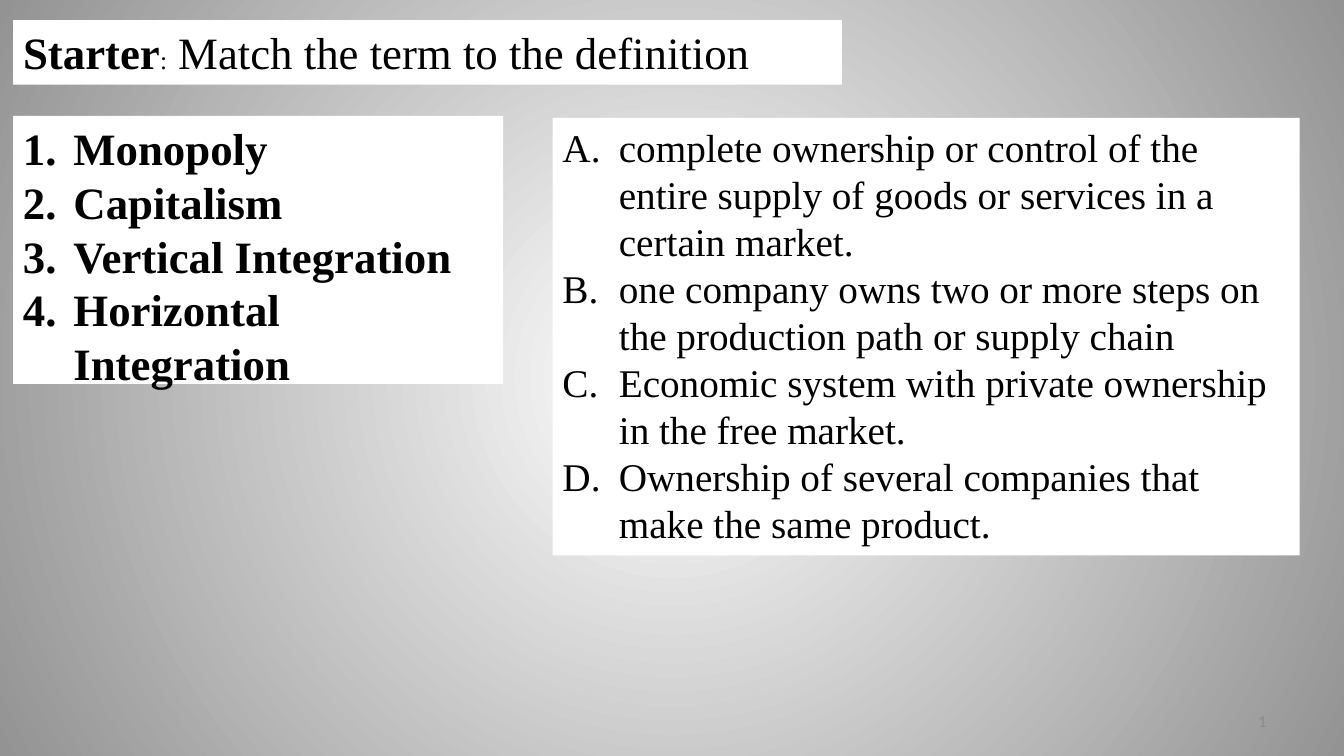
"""Build the starter slide that matches economic terms to their definitions."""
from lxml import etree
from pptx import Presentation
from pptx.dml.color import RGBColor
from pptx.enum.text import MSO_ANCHOR, PP_ALIGN
from pptx.oxml.ns import qn
from pptx.util import Inches, Pt

LEFT, RIGHT = PP_ALIGN.LEFT, PP_ALIGN.RIGHT
TOP, MIDDLE = MSO_ANCHOR.TOP, MSO_ANCHOR.MIDDLE
THEME = {
    "font": "Times New Roman", "number_font": "Calibri",
    "text": "000000", "panel": "FFFFFF", "number": "8B8B8B",
    "center": "FFFFFF", "edge": "939393",
    "term": 32, "definition": 28, "colon": 18, "page": 12,
}
WIDTH, HEIGHT = 13.33, 7.5
MARGIN = 0.13
DEFINITIONS_LEFT = 5.48

presentation = Presentation()
presentation.slide_width, presentation.slide_height = Inches(WIDTH), Inches(HEIGHT)
slide = presentation.slides.add_slide(presentation.slide_layouts[6])

background = slide.background.fill
background.gradient()
for stop, name, position in zip(background.gradient_stops, ("center", "edge"), (0, 1)):
    stop.color.rgb = RGBColor.from_string(THEME[name])
    stop.position = position
linear = slide.background._cSld.find(".//" + qn("a:lin"))
gradient = linear.getparent()
gradient.remove(linear)
circle = etree.SubElement(gradient, qn("a:path"), path="circle")
etree.SubElement(circle, qn("a:fillToRect"), l="50000", t="50000", r="50000", b="50000")


def add_text(box, paragraphs, fill=None, font="font", color="text", align=LEFT,
             anchor=TOP, numbering=None, indent=0):
    """Add a text box; each paragraph is a list of (text, size, bold) runs."""
    shape = slide.shapes.add_textbox(*map(Inches, box))
    if fill:
        shape.fill.solid()
        shape.fill.fore_color.rgb = RGBColor.from_string(THEME[fill])
    frame = shape.text_frame
    frame.word_wrap = True
    frame.vertical_anchor = anchor
    for index, runs in enumerate(paragraphs):
        paragraph = frame.add_paragraph() if index else frame.paragraphs[0]
        paragraph.alignment = align
        if numbering:
            properties = paragraph._p.get_or_add_pPr()
            properties.set("marL", str(Inches(indent)))
            properties.set("indent", str(-Inches(indent)))
            bullet_color = etree.SubElement(properties, qn("a:buClr"))
            etree.SubElement(bullet_color, qn("a:srgbClr"), val=THEME[color])
            etree.SubElement(properties, qn("a:buFont"), typeface=THEME[font])
            etree.SubElement(properties, qn("a:buAutoNum"), type=numbering)
        for text, size, bold in runs:
            run = paragraph.add_run()
            run.text = text
            run.font.name = THEME[font]
            run.font.size = Pt(THEME[size])
            run.font.bold = bold
            run.font.color.rgb = RGBColor.from_string(THEME[color])


terms = ["Monopoly", "Capitalism", "Vertical Integration", "Horizontal Integration"]
definitions = [
    "complete ownership or control of the entire supply of goods or services in a certain market.",
    "one company owns two or more steps on the production path or supply chain",
    "Economic system with private ownership in the free market.",
    "Ownership of several companies that make the same product.",
]
heading = [("Starter", "term", True), (":", "colon", False),
           (" Match the term to the definition", "term", False)]

add_text((MARGIN, 0.2, 8.22, 0.64), [heading], fill="panel")
add_text((MARGIN, 1.15, 4.86, 2.66), [[(term, "term", True)] for term in terms],
         fill="panel", numbering="arabicPeriod", indent=0.5)
add_text((DEFINITIONS_LEFT, 1.17, 7.41, 4.34),
         [[(definition, "definition", False)] for definition in definitions],
         fill="panel", numbering="alphaUcPeriod", indent=0.56)
add_text((WIDTH - 3.78, 6.95, 3.11, 0.4), [[("1", "page", False)]],
         font="number_font", color="number", align=RIGHT, anchor=MIDDLE)

presentation.save("out.pptx")
